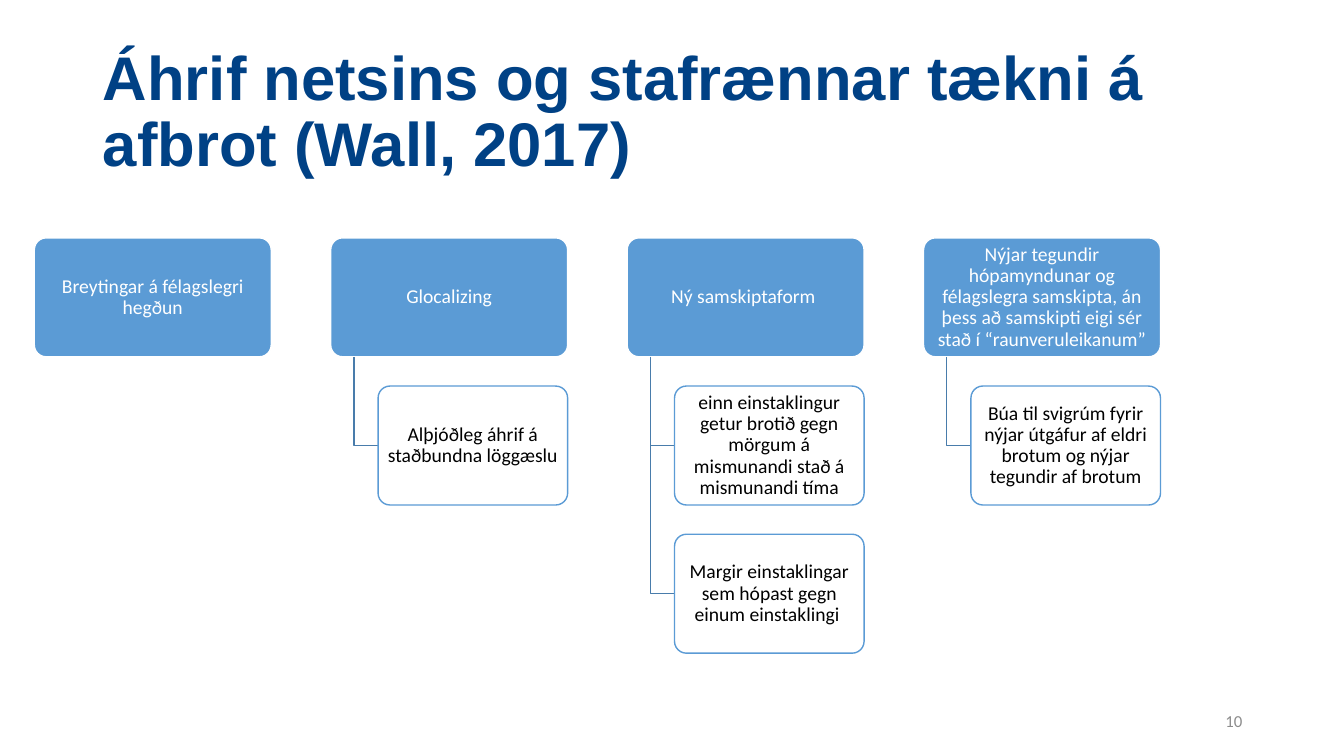
"""Build a slide with four topic columns and their branching details."""
from dataclasses import dataclass

from lxml import etree
from pptx import Presentation
from pptx.dml.color import RGBColor
from pptx.enum.shapes import MSO_SHAPE
from pptx.enum.text import MSO_ANCHOR, MSO_AUTO_SIZE, PP_ALIGN
from pptx.oxml.ns import qn
from pptx.shapes.autoshape import Shape
from pptx.slide import Slide
from pptx.util import Inches, Pt

ROUNDED = MSO_SHAPE.ROUNDED_RECTANGLE
MIDDLE = MSO_ANCHOR.MIDDLE
NO_AUTOFIT = MSO_AUTO_SIZE.NONE
LEFT, CENTER, RIGHT = PP_ALIGN.LEFT, PP_ALIGN.CENTER, PP_ALIGN.RIGHT
TITLE_ONLY = 5


@dataclass(frozen=True)
class Theme:
    """Colours, fonts and type sizes of the slide."""

    navy: str = "004185"
    blue: str = "5B9BD5"
    branch: str = "497CAB"
    gray: str = "8C8C8C"
    white: str = "FFFFFF"
    black: str = "000000"
    title_font: str = "Arial"
    body_font: str = "Calibri"
    title_size: int = 44
    card_size: int = 14
    number_size: int = 12
    line_width: int = 1


@dataclass(frozen=True)
class Grid:
    """Column and row rules of the tree, in inches."""

    left: float = 0.34
    top: float = 2.36
    column_pitch: float = 2.94
    row_pitch: float = 1.47
    card_width: float = 2.35
    card_height: float = 1.18
    trunk_offset: float = 0.23
    detail_indent: float = 0.47

    def column(self, index: int) -> float:
        """Return the left edge of a column."""
        return self.left + index * self.column_pitch

    def row(self, index: int) -> float:
        """Return the top edge of a row."""
        return self.top + index * self.row_pitch


@dataclass(frozen=True)
class Topic:
    """A heading card with the detail cards below it."""

    heading: str
    details: tuple[str, ...] = ()


THEME = Theme()
GRID = Grid()
TITLE = "Áhrif netsins og stafrænnar tækni á afbrot (Wall, 2017)"
TOPICS = (
    Topic("Breytingar á félagslegri hegðun"),
    Topic("Glocalizing", ("Alþjóðleg áhrif á staðbundna löggæslu",)),
    Topic("Ný samskiptaform ", (
        "einn einstaklingur getur brotið gegn mörgum á mismunandi stað á mismunandi tíma",
        "Margir einstaklingar sem hópast gegn einum einstaklingi ",
    )),
    Topic(
        "Nýjar tegundir hópamyndunar og félagslegra samskipta, án þess að "
        "samskipti eigi sér stað í “raunveruleikanum”",
        ("Búa til svigrúm fyrir nýjar útgáfur af eldri brotum og nýjar tegundir af brotum",),
    ),
)


def write_text(shape: Shape, text: str, *, size: int, color: str,
               font: str = THEME.body_font, bold: bool = False,
               alignment: PP_ALIGN = CENTER, line_spacing: float = 0.9) -> None:
    """Write one formatted paragraph, centred vertically in the shape."""
    frame = shape.text_frame
    frame.word_wrap = True
    frame.auto_size = NO_AUTOFIT
    frame.vertical_anchor = MIDDLE
    paragraph = frame.paragraphs[0]
    paragraph.alignment = alignment
    paragraph.line_spacing = line_spacing
    run = paragraph.add_run()
    run.text = text
    run.font.name = font
    run.font.size = Pt(size)
    run.font.bold = bold
    run.font.color.rgb = RGBColor.from_string(color)


def style_line(shape: Shape, color: str) -> None:
    """Give the shape a thin outline and no shadow."""
    shape.shadow.inherit = False
    shape.line.color.rgb = RGBColor.from_string(color)
    shape.line.width = Pt(THEME.line_width)


def add_card(slide: Slide, left: float, top: float, width: float, text: str, *,
             fill: str, line: str, color: str, opacity: int = 100) -> None:
    """Add a rounded card with centred text."""
    card = slide.shapes.add_shape(ROUNDED, Inches(left), Inches(top),
                                  Inches(width), Inches(GRID.card_height))
    card.adjustments[0] = 0.1
    card.fill.solid()
    card.fill.fore_color.rgb = RGBColor.from_string(fill)
    if opacity < 100:
        fill_color = card.element.find(f".//{qn('a:solidFill')}/{qn('a:srgbClr')}")
        etree.SubElement(fill_color, qn("a:alpha"), val=str(opacity * 1000))
    style_line(card, line)
    frame = card.text_frame
    frame.margin_left = frame.margin_right = Inches(0.03)
    frame.margin_top = frame.margin_bottom = Inches(0.02)
    write_text(card, text, size=THEME.card_size, color=color)


def add_branch(slide: Slide, column_left: float, detail_top: float) -> None:
    """Add an angled line from a heading card to a detail card."""
    trunk = Inches(column_left + GRID.trunk_offset)
    middle = Inches(detail_top + GRID.card_height / 2)
    builder = slide.shapes.build_freeform(trunk, Inches(GRID.top + GRID.card_height))
    builder.add_line_segments(
        [(trunk, middle), (Inches(column_left + GRID.detail_indent), middle)], close=False)
    branch = builder.convert_to_shape()
    branch.fill.background()
    style_line(branch, THEME.branch)


def add_topic(slide: Slide, index: int, topic: Topic) -> None:
    """Add one column of the tree."""
    left = GRID.column(index)
    add_card(slide, left, GRID.top, GRID.card_width, topic.heading,
             fill=THEME.blue, line=THEME.white, color=THEME.white)
    for row, detail in enumerate(topic.details, start=1):
        top = GRID.row(row)
        add_branch(slide, left, top)
        add_card(slide, left + GRID.detail_indent, top,
                 GRID.card_width - GRID.detail_indent, detail,
                 fill=THEME.white, line=THEME.blue, color=THEME.black, opacity=90)


def main() -> None:
    """Build and save the presentation."""
    presentation = Presentation()
    presentation.slide_width = Inches(13.33)
    presentation.slide_height = Inches(7.5)
    slide = presentation.slides.add_slide(presentation.slide_layouts[TITLE_ONLY])

    title = slide.shapes.title
    title.left, title.top = Inches(0.92), Inches(0.4)
    title.width, title.height = Inches(11.5), Inches(1.45)
    write_text(title, TITLE, size=THEME.title_size, color=THEME.navy,
               font=THEME.title_font, bold=True, alignment=LEFT)

    number = slide.shapes.add_textbox(Inches(9.42), Inches(6.95), Inches(3), Inches(0.4))
    write_text(number, "10", size=THEME.number_size, color=THEME.gray,
               alignment=RIGHT, line_spacing=1.0)

    for index, topic in enumerate(TOPICS):
        add_topic(slide, index, topic)
    presentation.save("out.pptx")


if __name__ == "__main__":
    main()
